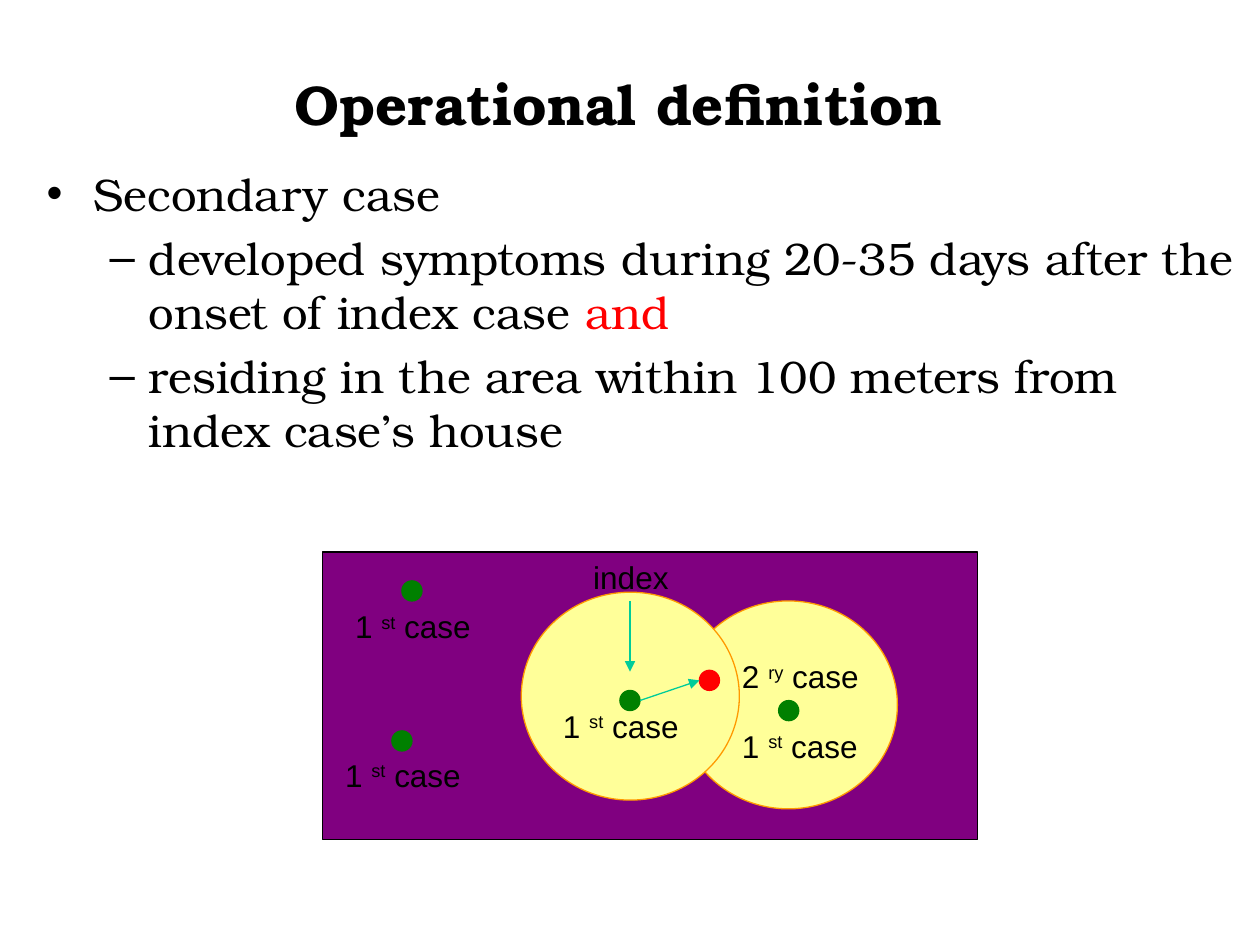
import pptx
import pptx.dml.color
import pptx.enum.shapes
import pptx.enum.text
import pptx.oxml
import pptx.oxml.ns
import pptx.util
from lxml import etree

Pt = pptx.util.Pt
RGBColor = pptx.dml.color.RGBColor
SHAPE = pptx.enum.shapes.MSO_SHAPE
ALIGN = pptx.enum.text.PP_ALIGN
ANCHOR = pptx.enum.text.MSO_ANCHOR
AUTO_SIZE = pptx.enum.text.MSO_AUTO_SIZE
qn = pptx.oxml.ns.qn

BLACK = RGBColor(0x00, 0x00, 0x00)
RED = RGBColor(0xFF, 0x00, 0x00)
GREEN = RGBColor(0x00, 0x80, 0x00)
PURPLE = RGBColor(0x80, 0x00, 0x80)
YELLOW = RGBColor(0xFF, 0xFF, 0x99)
ORANGE = RGBColor(0xFF, 0x99, 0x00)
TEAL = RGBColor(0x00, 0xCC, 0x99)

HEADING_FONT = "TeX Gyre Bonum"
LABEL_FONT = "Arial"
LINE_WIDTH = 0.75
DOT_SIZE = 11.5
CIRCLE_SIZE = (124.6, 118.8)
LABEL_SIZE = (130.3, 28.8)


def place(shape, left, top, width, height):
    shape.left, shape.top = Pt(left), Pt(top)
    shape.width, shape.height = Pt(width), Pt(height)


def add_text(paragraph, text, *, font, size, color=BLACK, bold=False, superscript=False):
    run = paragraph.add_run()
    run.text = text
    run.font.name = font
    run.font.size = Pt(size)
    run.font.bold = bold
    run.font.color.rgb = color
    if superscript:
        run.font._element.set("baseline", "30000")


def set_bullet(paragraph, character, margin, indent):
    properties = paragraph._p.get_or_add_pPr()
    properties.set("marL", str(Pt(margin)))
    properties.set("indent", str(Pt(indent)))
    etree.SubElement(properties, qn("a:buChar")).set("char", character)


class SlideBuilder:
    def __init__(self, slide):
        self.slide = slide

    def title(self, text, box):
        shape = self.slide.shapes.title
        place(shape, *box)
        frame = shape.text_frame
        frame.auto_size = AUTO_SIZE.NONE
        frame.vertical_anchor = ANCHOR.MIDDLE
        paragraph = frame.paragraphs[0]
        paragraph.alignment = ALIGN.CENTER
        add_text(paragraph, text, font=HEADING_FONT, size=32, bold=True)

    def body(self, items, box):
        """Fill the body with (level, [(text, color), ...]) items."""
        shape = self.slide.placeholders[1]
        place(shape, *box)
        frame = shape.text_frame
        frame.auto_size = AUTO_SIZE.NONE
        bullets = (("•", 27, -27), ("–", 58.5, -22.5))
        for index, (level, runs) in enumerate(items):
            paragraph = frame.add_paragraph() if index else frame.paragraphs[0]
            set_bullet(paragraph, *bullets[level])
            paragraph.level = level
            paragraph.line_spacing = 1.0 if level else 1.2
            paragraph.space_before = Pt(5.2 if index else 0)
            for text, color in runs:
                add_text(paragraph, text, font=HEADING_FONT, size=26, color=color)

    def shape(self, kind, box, fill, line):
        shape = self.slide.shapes.add_shape(kind, *map(Pt, box))
        shape.shadow.inherit = False
        shape.fill.solid()
        shape.fill.fore_color.rgb = fill
        shape.line.color.rgb = line
        shape.line.width = Pt(LINE_WIDTH)

    def ellipse(self, center, size, fill, line):
        (x, y), (width, height) = center, size
        self.shape(SHAPE.OVAL, (x - width / 2, y - height / 2, width, height), fill, line)

    def dot(self, center, color):
        self.ellipse(center, (DOT_SIZE, DOT_SIZE), color, color)

    def label(self, position, text, ordinal="", ending=""):
        box = self.slide.shapes.add_textbox(*map(Pt, position + LABEL_SIZE))
        frame = box.text_frame
        frame.word_wrap = True
        frame.auto_size = AUTO_SIZE.SHAPE_TO_FIT_TEXT
        paragraph = frame.paragraphs[0]
        for part, raised in ((text, False), (ordinal, True), (ending, False)):
            if part:
                add_text(paragraph, part, font=LABEL_FONT, size=18, superscript=raised)

    def arrow(self, start, end):
        connector = self.slide.shapes.add_connector(
            pptx.enum.shapes.MSO_CONNECTOR.STRAIGHT, *map(Pt, start + end))
        connector.line.color.rgb = TEAL
        connector.line.width = Pt(LINE_WIDTH)
        line = connector.line._get_or_add_ln()
        etree.SubElement(line, qn("a:tailEnd")).set("type", "triangle")
        etree.SubElement(connector._element.spPr, qn("a:effectLst"))


def main():
    presentation = pptx.Presentation()
    presentation.slide_width, presentation.slide_height = Pt(720), Pt(540)
    builder = SlideBuilder(presentation.slides.add_slide(presentation.slide_layouts[1]))

    builder.title("Operational definition ", (36, 23, 646.6, 71.3))
    builder.body([
        (0, [("Secondary case", BLACK)]),
        (1, [("developed symptoms during 20-35 days after the onset of index case ", BLACK),
             ("and", RED)]),
        (1, [("residing in the area within 100 meters from index case’s house", BLACK)]),
    ], (19.4, 85, 700.6, 451.4))

    builder.shape(SHAPE.RECTANGLE, (184.3, 315.4, 374.4, 164.2), PURPLE, BLACK)
    for center in ((450.5, 402.8), (360.2, 397.8)):
        builder.ellipse(center, CIRCLE_SIZE, YELLOW, ORANGE)

    index_case, secondary_case = (360, 400.3), (405.4, 388.8)
    for center in ((235.4, 337.7), (229.7, 423.4), index_case, (450.7, 406.1)):
        builder.dot(center, GREEN)
    builder.dot(secondary_case, RED)

    for position in ((190.1, 428.4), (195.8, 343.4), (416.9, 411.8), (314.6, 400.3)):
        builder.label(position, "1 ", "st", " case")
    builder.label((416.9, 372.2), "2 ", "ry", " case")
    builder.label((331.9, 315.4), "index")

    builder.arrow((360, 343.4), (360, 383.8))
    radius = DOT_SIZE / 2
    builder.arrow((index_case[0] + radius, index_case[1]),
                  (secondary_case[0] - radius, secondary_case[1]))

    presentation.save("out.pptx")


if __name__ == "__main__":
    main()
